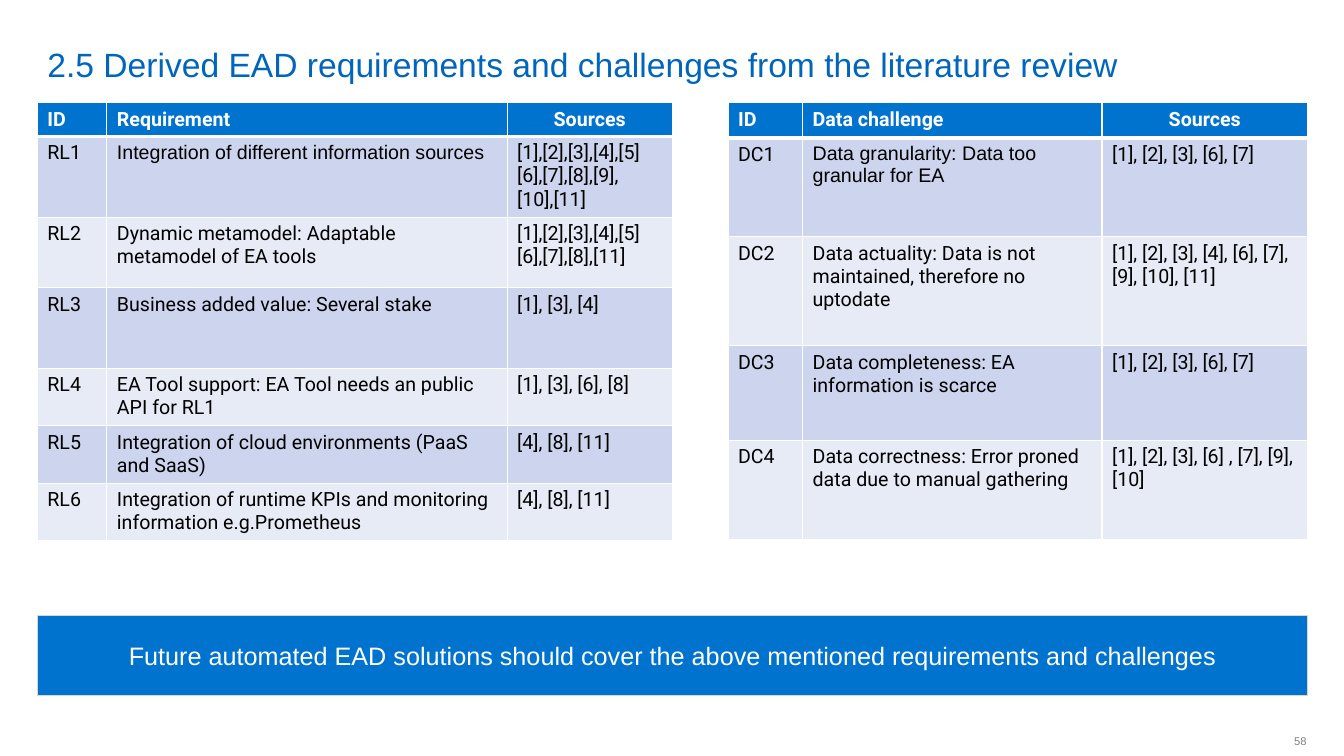
from lxml import etree
from pptx import Presentation
from pptx.dml.color import RGBColor
from pptx.enum.shapes import MSO_SHAPE
from pptx.enum.text import MSO_ANCHOR, MSO_AUTO_SIZE, PP_ALIGN
from pptx.oxml.ns import qn
from pptx.util import Inches, Pt

LEFT, CENTER, RIGHT = PP_ALIGN.LEFT, PP_ALIGN.CENTER, PP_ALIGN.RIGHT
BOTTOM, MIDDLE = MSO_ANCHOR.BOTTOM, MSO_ANCHOR.MIDDLE
NO_FIT = MSO_AUTO_SIZE.NONE
RECT = MSO_SHAPE.RECTANGLE

COLORS = {
    "title": "0065BD",
    "blue": "0073CF",
    "odd": "CCD5ED",
    "even": "E7EBF6",
    "white": "FFFFFF",
    "black": "000000",
    "gray": "808080",
    "edge": "DAD7CB",
}

NEEDS = [
    ("ID", "Requirement", "Sources"),
    ("RL1", "Integration of different information sources",
     "[1],[2],[3],[4],[5][6],[7],[8],[9],\n[10],[11]"),
    ("RL2", "Dynamic metamodel: Adaptable metamodel of EA tools",
     "[1],[2],[3],[4],[5][6],[7],[8],[11]"),
    ("RL3", "Business added value: Several stake", "[1], [3], [4]"),
    ("RL4", "EA Tool support: EA Tool needs an public API for RL1",
     "[1], [3], [6], [8]"),
    ("RL5", "Integration of cloud environments (PaaS and SaaS)",
     "[4], [8], [11]"),
    ("RL6", "Integration of runtime KPIs and monitoring information e.g.Prometheus",
     "[4], [8], [11]"),
]

ISSUES = [
    ("ID", "Data challenge", "Sources"),
    ("DC1", "Data granularity: Data too granular for EA",
     "[1], [2], [3], [6], [7]"),
    ("DC2", "Data actuality: Data is not maintained, therefore no uptodate",
     "[1], [2], [3], [4], [6], [7], [9], [10], [11]"),
    ("DC3", "Data completeness: EA information is scarce",
     "[1], [2], [3], [6], [7]"),
    ("DC4", "Data correctness: Error proned data due to manual gathering",
     "[1], [2], [3], [6] , [7], [9], [10]"),
]


class Deck:
    def __init__(self):
        self.file = Presentation()
        self.file.slide_width = Inches(13.33)
        self.file.slide_height = Inches(7.5)
        self.slide = self.file.slides.add_slide(self.file.slide_layouts[5])

    def color(self, name):
        return RGBColor.from_string(COLORS[name])

    def label(self, frame, text, size, color, align=LEFT, face="Arial", bold=False):
        para = frame.paragraphs[0]
        para.text = text
        para.alignment = align
        font = para.font
        font.name, font.size, font.bold = face, Pt(size), bold
        font.color.rgb = self.color(color)

    def title(self, text, *box):
        shape = self.slide.shapes.title
        shape.left, shape.top, shape.width, shape.height = map(Inches, box)
        frame = shape.text_frame
        frame.auto_size = NO_FIT
        frame.vertical_anchor = BOTTOM
        frame.margin_top = frame.margin_bottom = 0
        self.label(frame, text, 24, "title")

    def number(self, text, *box):
        shape = self.slide.shapes.add_textbox(*map(Inches, box))
        frame = shape.text_frame
        frame.word_wrap = False
        frame.vertical_anchor = MIDDLE
        frame.margin_right = 0
        self.label(frame, text, 8, "gray", RIGHT)

    def banner(self, text, *box):
        shape = self.slide.shapes.add_shape(RECT, *map(Inches, box))
        shape.shadow.inherit = False
        shape.fill.solid()
        shape.fill.fore_color.rgb = self.color("blue")
        shape.line.color.rgb = self.color("edge")
        shape.line.width = Pt(0.75)
        shape.text_frame.vertical_anchor = MIDDLE
        self.label(shape.text_frame, text, 18, "white", CENTER)

    def border(self, cell, side, width):
        props = cell._tc.get_or_add_tcPr()
        line = etree.SubElement(props, qn(f"a:ln{side}"), w=str(Pt(width)))
        fill = etree.SubElement(line, qn("a:solidFill"))
        etree.SubElement(fill, qn("a:srgbClr"), val=COLORS["white"])

    def cell(self, cell, text, row, col):
        head = row == 0
        for side in "LRTB":
            thick = (head and side == "B") or (row == 1 and side == "T")
            self.border(cell, side, 3 if thick else 1)
        cell.fill.solid()
        shade = "blue" if head else "odd" if row % 2 else "even"
        cell.fill.fore_color.rgb = self.color(shade)
        self.label(
            cell.text_frame, text, 14,
            "white" if head else "black",
            CENTER if head and col == 2 else LEFT,
            "Arial" if (row, col) == (1, 1) else "Roboto",
            head,
        )

    def table(self, data, left, top, widths, heights):
        frame = self.slide.shapes.add_table(
            len(heights), len(widths), Inches(left), Inches(top),
            Inches(sum(widths)), Inches(sum(heights)))
        table = frame.table
        for col, width in zip(table.columns, widths):
            col.width = Inches(width)
        for row, height in zip(table.rows, heights):
            row.height = Inches(height)
        for row, texts in enumerate(data):
            for col, text in enumerate(texts):
                self.cell(table.cell(row, col), text, row, col)


def main():
    deck = Deck()
    deck.title("2.5 Derived EAD requirements and challenges from the literature review",
               0.37, 0.05, 11.58, 0.79)
    deck.number("58", 12.6, 7.19, 0.36, 0.32)
    deck.table(NEEDS, 0.37, 1.02, [0.69, 3.97, 1.64],
               [0.33, 0.8, 0.7, 0.8, 0.57, 0.57, 0.57])
    deck.table(ISSUES, 7.22, 1.02, [0.74, 2.97, 2.04],
               [0.35, 0.98, 1.08, 0.94, 0.98])
    deck.banner("Future automated EAD solutions should cover the above mentioned "
                "requirements and challenges", 0.37, 6.11, 12.6, 0.79)
    deck.file.save("out.pptx")


if __name__ == "__main__":
    main()
